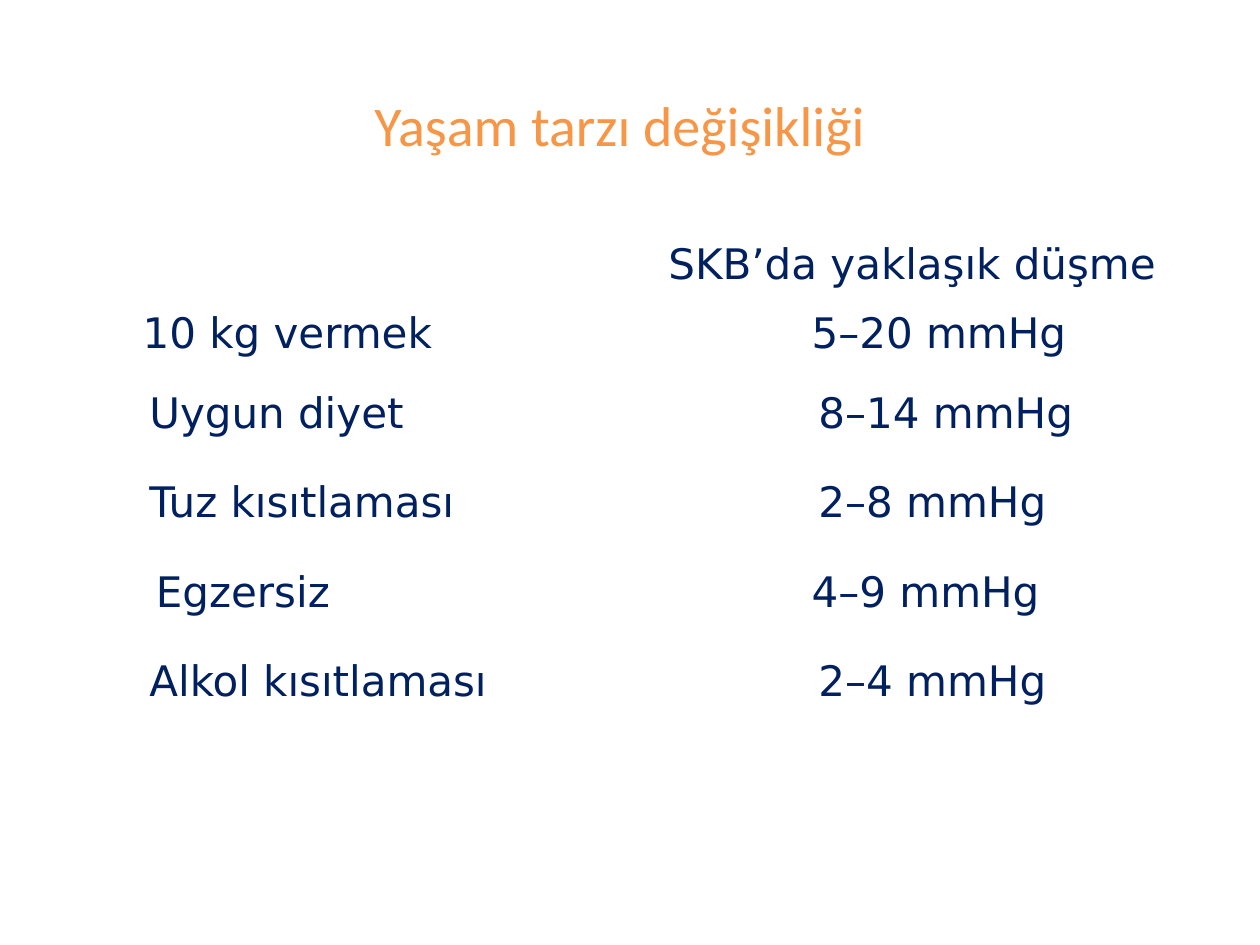
from pptx import Presentation
from pptx.dml.color import RGBColor
from pptx.enum.text import MSO_ANCHOR, PP_ALIGN
from pptx.util import Inches, Pt

# Content: left text, right text, left indent, right indent (in steps), row height, shift
TITLE = "Yaşam tarzı değişikliği"
ROWS = [
    ("", "SKB’da yaklaşık düşme", 0, 0, 0.73, 0),
    ("10 kg vermek", "5–20 mmHg", 2, 4, 0.98, 0),
    ("Uygun diyet", "8–14 mmHg", 1, 2, 0.57, 1),
    ("Tuz kısıtlaması", "2–8 mmHg", 1, 0, 0.76, 1),
    ("Egzersiz", "4–9 mmHg", 3, 2, 1.3, 0),
    ("Alkol kısıtlaması", "2–4 mmHg", 1, 0, 0.56, 1),
]

THEME = {
    "title": {"name": "Calibri", "size": Pt(32), "color": "F79646"},
    "body": {"name": "DejaVu Sans", "size": Pt(24), "color": "002060"},
}

# Grid
WIDE, HIGH = 10, 7.5
COLS = (3.55, 5.74)
LEFT, SHIFT = 0.82, 0.16
HEAD, FIRST, LAST = 1.86, 2.41, 5.17
PITCH = 0.71
PAD, STEP = 0.1, 0.106
TOPS = [HEAD, FIRST, 3.04] + [LAST - PITCH * n for n in (2, 1, 0)]


def write(frame, text, role, align):
    para = frame.paragraphs[0]
    para.alignment = align
    run = para.add_run()
    run.text = text
    for key, value in THEME[role].items():
        if key == "color":
            run.font.color.rgb = RGBColor.from_string(value)
        else:
            setattr(run.font, key, value)


def add_row(slide, row, top):
    *texts, near, far, high, shift = row
    frame = slide.shapes.add_table(
        1, 2, Inches(LEFT + shift * SHIFT), Inches(top),
        Inches(sum(COLS)), Inches(high))
    table = frame.table
    for key in ("first_row", "horz_banding"):
        setattr(table, key, False)
    aligns = (PP_ALIGN.LEFT, PP_ALIGN.CENTER)
    for col, (text, dent, align) in enumerate(zip(texts, (near, far), aligns)):
        table.columns[col].width = Inches(COLS[col])
        cell = table.cell(0, col)
        cell.fill.background()
        cell.margin_left = Inches(PAD + dent * STEP)
        if text:
            write(cell.text_frame, text, "body", align)


def main():
    deck = Presentation()
    deck.slide_width, deck.slide_height = Inches(WIDE), Inches(HIGH)
    slide = deck.slides.add_slide(deck.slide_layouts[6])

    # Title
    box = slide.shapes.add_textbox(
        Inches(0.67), Inches(0.36), Inches(8.5), Inches(1.25))
    form = {"word_wrap": True, "vertical_anchor": MSO_ANCHOR.MIDDLE}
    for key, value in form.items():
        setattr(box.text_frame, key, value)
    write(box.text_frame, TITLE, "title", PP_ALIGN.CENTER)

    # One single-row table per measure
    for row, top in zip(ROWS, TOPS):
        add_row(slide, row, top)

    deck.save("out.pptx")


if __name__ == "__main__":
    main()
